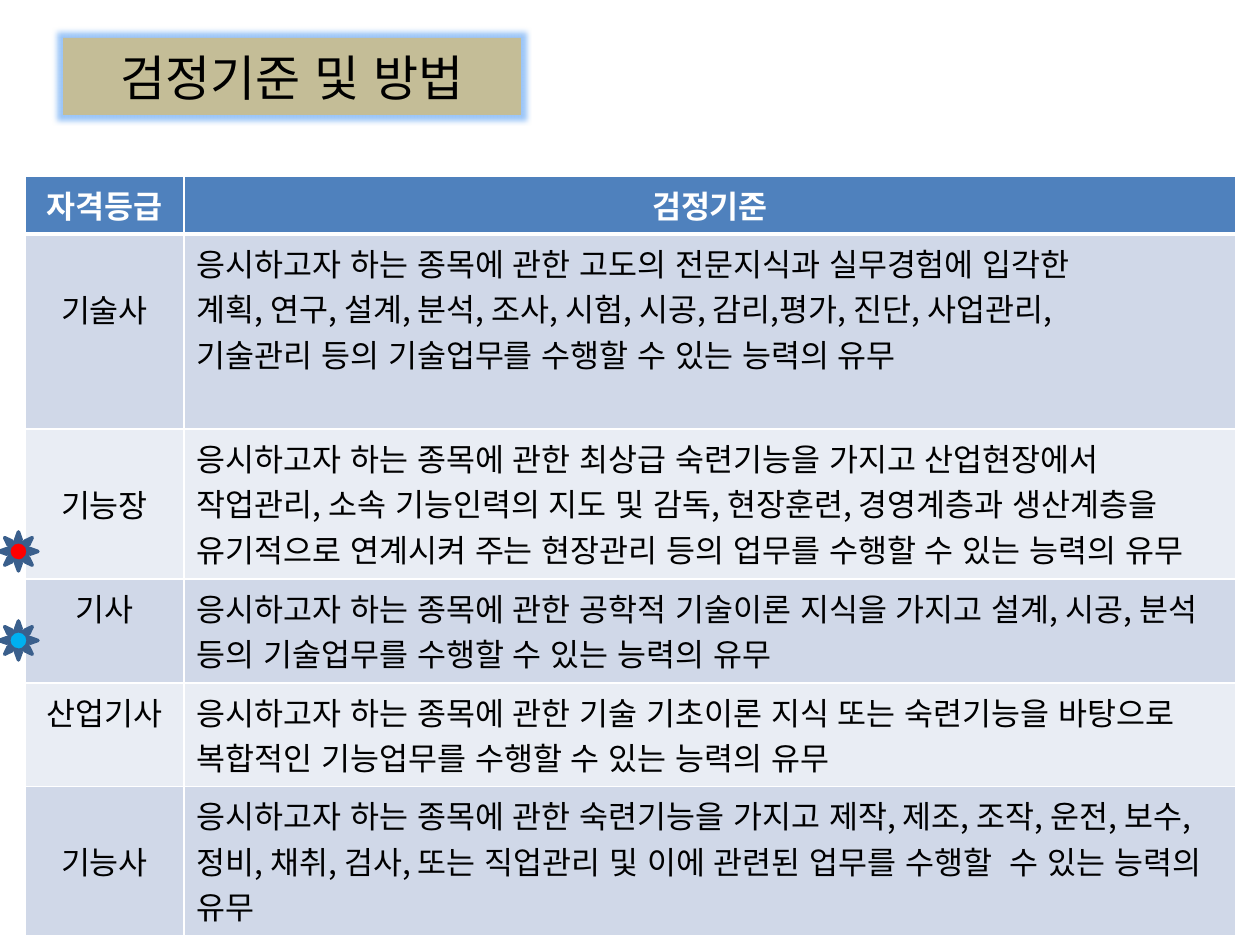
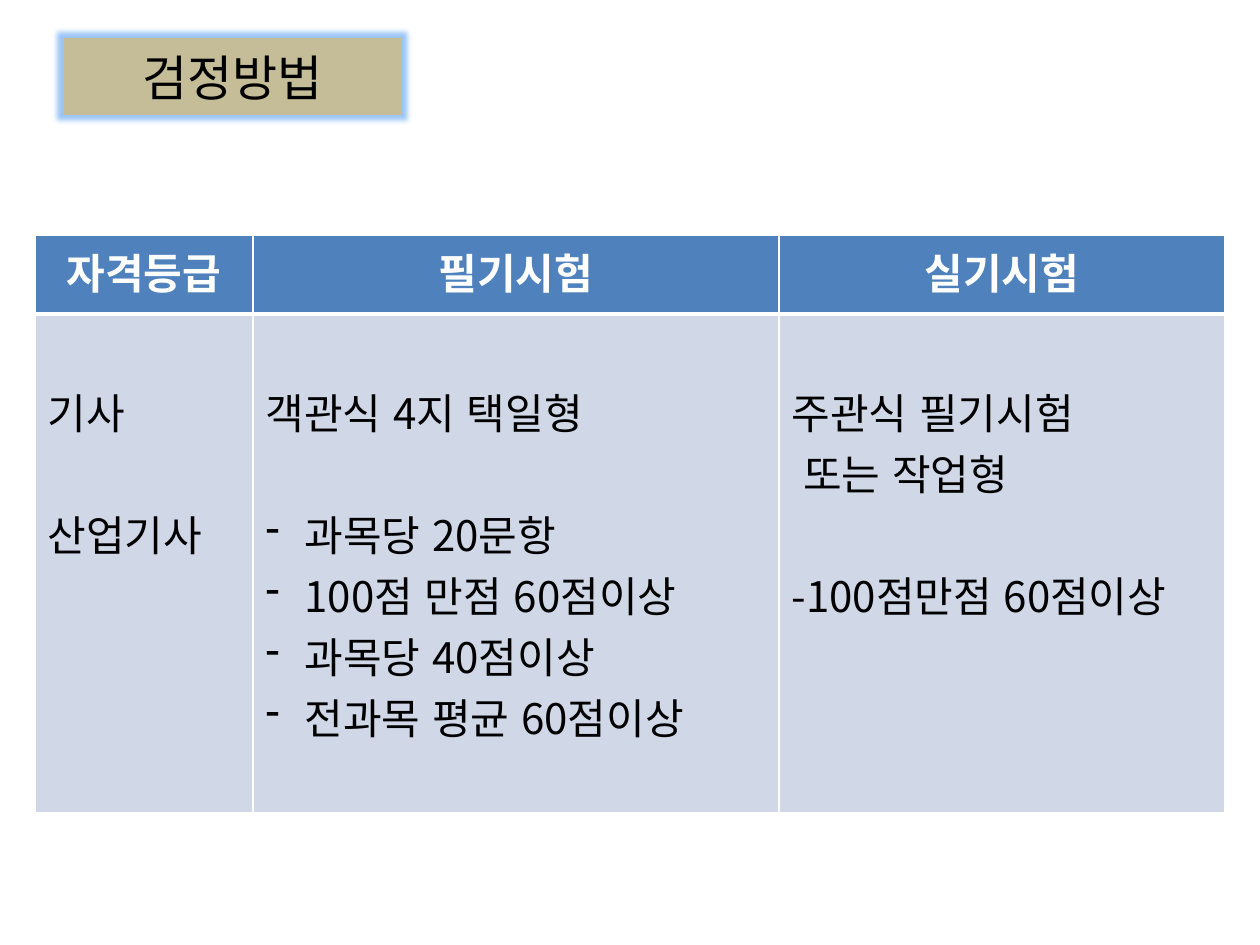
from dataclasses import dataclass

from lxml.etree import SubElement
from pptx import Presentation
from pptx.dml.color import RGBColor
from pptx.enum.lang import MSO_LANGUAGE_ID as Language
from pptx.enum.shapes import MSO_SHAPE as Shape
from pptx.enum.text import MSO_ANCHOR as Anchor, MSO_AUTO_SIZE as AutoSize, PP_ALIGN as Align
from pptx.oxml.ns import qn
from pptx.util import Emu, Pt


@dataclass(frozen=True)
class Theme:
    font: str = "Noto Sans CJK KR"
    ink: str = "000000"
    white: str = "FFFFFF"
    title_fill: str = "C4BD97"
    title_glow: str = "9CC6F8"
    header: str = "4F81BD"
    bands: tuple = ("D0D8E8", "E9EDF4")
    sun_line: str = "3A5F8C"
    red: str = "FF0000"
    sky: str = "00B0F0"
    title_size: int = 28
    criteria_size: int = 18
    method_size: int = 24


THEME = Theme()
PX_PER_INCH = 126
LINE_RATIO = 1.45  # line height relative to type size
CELL_TOP = 6
TITLE_ONLY = 5

# Grade, lines of blank space above it, criteria paragraphs, row height
CRITERIA = [
    ("기술사", 1, ["응시하고자 하는 종목에 관한 고도의 전문지식과 실무경험에 입각한",
                "계획, 연구, 설계, 분석, 조사, 시험, 시공, 감리,평가, 진단, 사업관리,",
                "기술관리 등의 기술업무를 수행할 수 있는 능력의 유무"], 195),
    ("기능장", 1, ["응시하고자 하는 종목에 관한 최상급 숙련기능을 가지고 산업현장에서 "
                "작업관리, 소속 기능인력의 지도 및 감독, 현장훈련, 경영계층과 생산계층을 "
                "유기적으로 연계시켜 주는 현장관리 등의 업무를 수행할 수 있는 능력의 유무"], 150),
    ("기사", 0, ["응시하고자 하는 종목에 관한 공학적 기술이론 지식을 가지고 설계, 시공, "
               "분석 등의 기술업무를 수행할 수 있는 능력의 유무"], 104),
    ("산업기사", 0, ["응시하고자 하는 종목에 관한 기술 기초이론 지식 또는 숙련기능을 바탕으로 "
                 "복합적인 기능업무를 수행할 수 있는 능력의 유무"], 103),
    ("기능사", 1, ["응시하고자 하는 종목에 관한 숙련기능을 가지고 제작, 제조, 조작, 운전, "
                "보수, 정비, 채취, 검사, 또는 직업관리 및 이에 관련된 업무를 수행할  수 "
                "있는 능력의 유무"], 149),
]

# Paragraphs of each column, and which of them follow a one-line gap
METHODS = [
    (["기사", "산업기사"], {1}),
    (["객관식 4지 택일형", "과목당 20문항", "100점 만점 60점이상",
      "과목당 40점이상", "전과목 평균 60점이상"], {1}),
    (["주관식 필기시험", " 또는 작업형", "-100점만점 60점이상"], {2}),
]


def px(length):
    return Emu(round(length * 914400 / PX_PER_INCH))


def rgb(color):
    return RGBColor.from_string(color)


def line_px(size):
    return round(size * LINE_RATIO * PX_PER_INCH / 72)


def format_paragraph(paragraph, size, color, bold=False, align=Align.LEFT):
    paragraph.alignment = align
    for run in paragraph.runs:
        font = run.font
        font.name, font.size, font.bold = THEME.font, Pt(size), bold
        font.color.rgb = rgb(color)
        font.language_id = Language.KOREAN
        latin = font._element.find(qn("a:latin"))
        east_asian = latin.makeelement(qn("a:ea"), {"typeface": THEME.font})
        latin.addnext(east_asian)


# Title with a soft glow
def add_title(slide, text, width):
    title = slide.shapes.title
    title.left, title.top, title.width, title.height = px(63), px(38), px(width), px(77)
    title.fill.solid()
    title.fill.fore_color.rgb = rgb(THEME.title_fill)
    title.line.fill.background()
    effects = SubElement(title._element.spPr, qn("a:effectLst"))
    glow = SubElement(effects, qn("a:glow"), rad=str(px(11)))
    SubElement(glow, qn("a:srgbClr"), val=THEME.title_glow)
    frame = title.text_frame
    frame.text = text
    frame.auto_size = AutoSize.NONE
    frame.vertical_anchor = Anchor.MIDDLE
    format_paragraph(frame.paragraphs[0], THEME.title_size, THEME.ink, align=Align.CENTER)


# Tables
def set_borders(cell, top, bottom):
    properties = cell._tc.get_or_add_tcPr()
    for side, width in (("lnL", 1), ("lnR", 1), ("lnT", top), ("lnB", bottom)):
        border = SubElement(properties, qn(f"a:{side}"), w=str(Pt(width)))
        fill = SubElement(border, qn("a:solidFill"))
        SubElement(fill, qn("a:srgbClr"), val=THEME.white)


def add_table(slide, left, top, widths, heights, headers, size):
    table = slide.shapes.add_table(len(heights), len(widths), px(left), px(top),
                                   px(sum(widths)), px(sum(heights))).table
    for column, width in zip(table.columns, widths):
        column.width = px(width)
    for index, (row, height) in enumerate(zip(table.rows, heights)):
        row.height = px(height)
        fill = THEME.bands[(index - 1) % 2] if index else THEME.header
        for cell in row.cells:
            set_borders(cell, 3 if index == 1 else 1, 1 if index else 3)
            cell.fill.solid()
            cell.fill.fore_color.rgb = rgb(fill)
    for cell, header in zip(table.rows[0].cells, headers):
        fill_cell(cell, [header], size, THEME.white, True, Align.CENTER)
    return table


def fill_cell(cell, lines, size, color=THEME.ink, bold=False, align=Align.LEFT,
              lines_above=0, gaps=()):
    cell.margin_top = px(CELL_TOP + lines_above * line_px(size))
    cell.text_frame.text = "\n".join(lines)
    for index, paragraph in enumerate(cell.text_frame.paragraphs):
        format_paragraph(paragraph, size, color, bold, align)
        if index in gaps:
            paragraph.space_before = Pt(round(size * LINE_RATIO))


def add_dash(paragraph):
    properties = paragraph._p.get_or_add_pPr()
    properties.set("marL", str(px(39)))
    properties.set("indent", str(-px(39)))
    SubElement(properties, qn("a:buChar"), char="-")


# Sun marker
def add_sun(slide, top, color):
    sun = slide.shapes.add_shape(Shape.SUN, px(-1), px(top), px(39), px(39))
    sun.shadow.inherit = False
    sun.fill.solid()
    sun.fill.fore_color.rgb = rgb(color)
    sun.line.color.rgb = rgb(THEME.sun_line)
    sun.line.width = Pt(2)


def build_criteria(slide):
    add_title(slide, "검정기준 및 방법", 458)
    size = THEME.criteria_size
    heights = [57] + [height for *_, height in CRITERIA]
    table = add_table(slide, 25, 176, [159, 1052], heights, ["자격등급", "검정기준"], size)
    for index, (grade, lines_above, lines, _) in enumerate(CRITERIA, 1):
        fill_cell(table.cell(index, 0), [grade], size, align=Align.CENTER,
                  lines_above=lines_above)
        fill_cell(table.cell(index, 1), lines, size)
    add_sun(slide, 532, THEME.red)
    add_sun(slide, 621, THEME.sky)


def build_methods(slide):
    add_title(slide, "검정방법", 339)
    size = THEME.method_size
    table = add_table(slide, 35, 235, [218, 526, 446], [79, 499],
                      ["자격등급", "필기시험", "실기시험"], size)
    for column, (lines, gaps) in enumerate(METHODS):
        fill_cell(table.cell(1, column), lines, size, lines_above=1, gaps=gaps)
    for paragraph in table.cell(1, 1).text_frame.paragraphs[1:]:
        add_dash(paragraph)


def main():
    presentation = Presentation()
    presentation.slide_width, presentation.slide_height = px(1260), px(945)
    for build in (build_criteria, build_methods):
        build(presentation.slides.add_slide(presentation.slide_layouts[TITLE_ONLY]))
    presentation.save("out.pptx")


if __name__ == "__main__":
    main()
